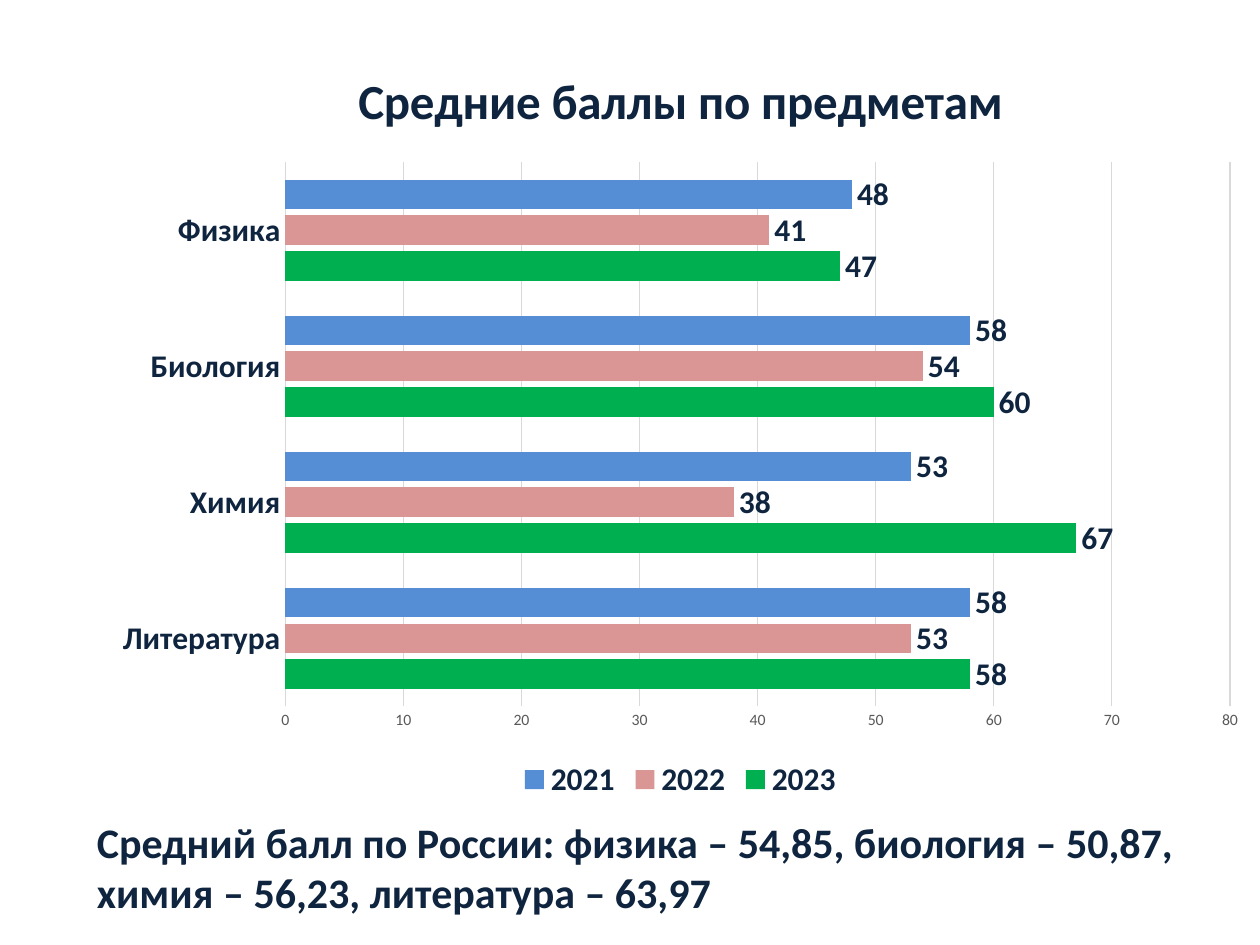
from dataclasses import dataclass

import pptx
import pptx.chart.data
import pptx.dml.color
import pptx.enum.chart
import pptx.enum.text
import pptx.util
from pptx.util import Inches


@dataclass(frozen=True)
class Theme:
    font: str = "Calibri"
    ink: str = "0F243E"
    muted: str = "595959"
    grid: str = "D9D9D9"
    title: int = 28
    note: int = 24
    label: int = 18
    tick: int = 9


THEME = Theme()
SUBJECTS = ["Литература", "Химия", "Биология", "Физика"]
SCORES = [
    ("2023", [58, 67, 60, 47], "00B050"),
    ("2022", [53, 38, 54, 41], "D99694"),
    ("2021", [58, 53, 58, 48], "558ED5"),
]


def rgb(value):
    return pptx.dml.color.RGBColor.from_string(value)


def set_font(font, size, color=THEME.ink, bold=True):
    font.name = THEME.font
    font.size = pptx.util.Pt(size)
    font.bold = bold
    font.color.rgb = rgb(color)


def set_line(line, width):
    line.color.rgb = rgb(THEME.grid)
    line.width = pptx.util.Pt(width)


def style_axes(chart):
    for axis in (chart.category_axis, chart.value_axis):
        axis.major_tick_mark = pptx.enum.chart.XL_TICK_MARK.NONE
        axis.minor_tick_mark = pptx.enum.chart.XL_TICK_MARK.NONE

    subjects = chart.category_axis
    subjects.has_major_gridlines = False
    set_font(subjects.tick_labels.font, THEME.label)
    set_line(subjects.format.line, 1)

    scale = chart.value_axis
    scale.minimum_scale, scale.maximum_scale, scale.major_unit = 0, 80, 10
    set_font(scale.tick_labels.font, THEME.tick, THEME.muted, False)
    scale.format.line.fill.background()
    set_line(scale.major_gridlines.format.line, 0.75)


def style_series(plot):
    plot.gap_width = 115
    plot.overlap = -20
    plot.vary_by_categories = False
    for series, (_, _, color) in zip(plot.series, SCORES):
        series.format.fill.solid()
        series.format.fill.fore_color.rgb = rgb(color)
        series.invert_if_negative = False
        labels = series.data_labels
        labels.show_value = True
        labels.position = pptx.enum.chart.XL_LABEL_POSITION.OUTSIDE_END
        set_font(labels.font, THEME.label)


def add_score_chart(slide, title, left, top, width, height):
    data = pptx.chart.data.CategoryChartData()
    data.categories = SUBJECTS
    for year, values, _ in SCORES:
        data.add_series(year, values)
    kind = pptx.enum.chart.XL_CHART_TYPE.BAR_CLUSTERED
    chart = slide.shapes.add_chart(kind, left, top, width, height, data).chart
    chart.font.name = THEME.font

    chart.has_title = True
    p = chart.chart_title.text_frame.paragraphs[0]
    p.add_run().text = title
    set_font(p.font, THEME.title)
    chart.chart_title.include_in_layout = False

    chart.has_legend = True
    chart.legend.position = pptx.enum.chart.XL_LEGEND_POSITION.BOTTOM
    chart.legend.include_in_layout = False
    set_font(chart.legend.font, THEME.label)

    style_axes(chart)
    style_series(chart.plots[0])


def add_note(slide, text, left, top, width, height):
    tf = slide.shapes.add_textbox(left, top, width, height).text_frame
    tf.word_wrap = True
    tf.auto_size = pptx.enum.text.MSO_AUTO_SIZE.SHAPE_TO_FIT_TEXT
    p = tf.paragraphs[0]
    p.text = text
    set_font(p.font, THEME.note)


def main():
    prs = pptx.Presentation()
    prs.slide_width, prs.slide_height = Inches(10), Inches(7.5)
    slide = prs.slides.add_slide(prs.slide_layouts[6])
    add_score_chart(slide, "Средние баллы по предметам",
                    Inches(0.79), Inches(0.29), Inches(9.22), Inches(6.1))
    add_note(slide, "Средний балл по России: физика – 54,85, биология – 50,87, "
             "химия – 56,23, литература – 63,97",
             Inches(0.67), Inches(6.43), Inches(9.53), Inches(0.91))
    prs.save("out.pptx")


if __name__ == "__main__":
    main()
